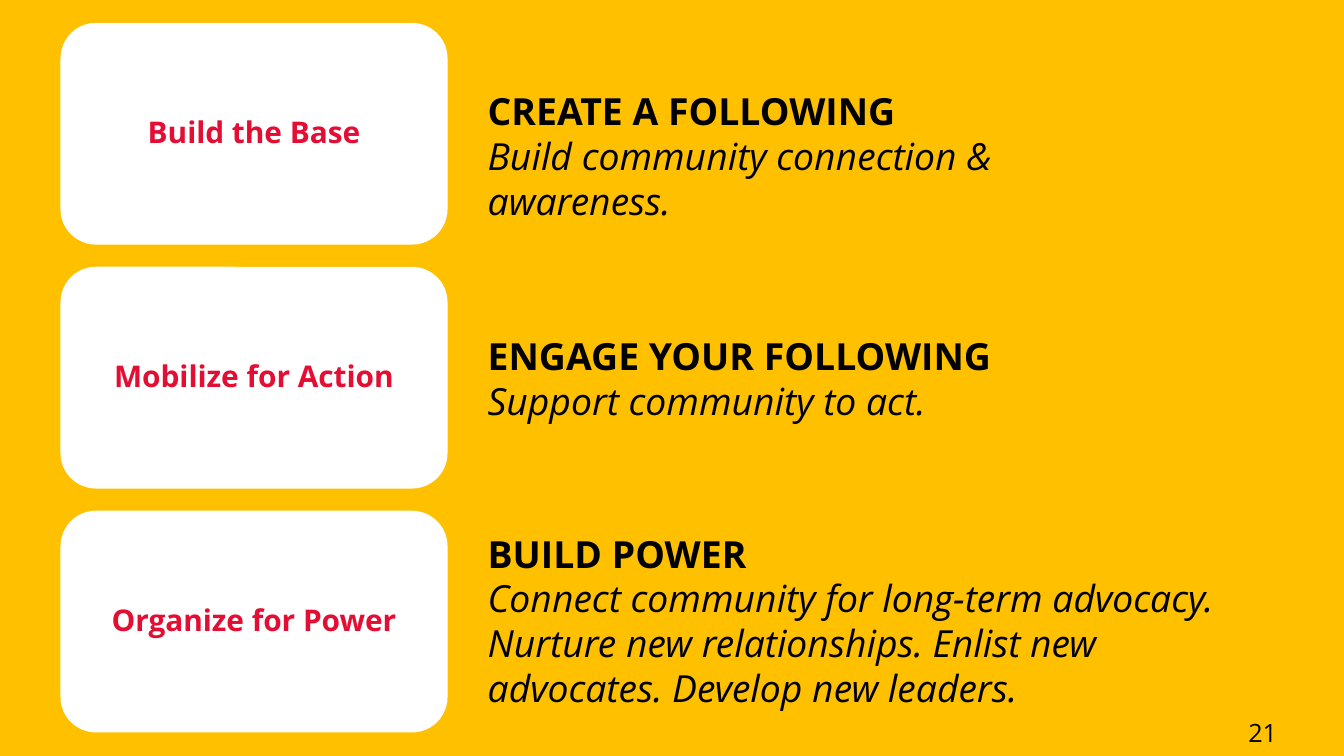
"""Build a slide of three organizing stages, each a card beside its explanation."""
from pptx import Presentation
from pptx.dml.color import RGBColor
from pptx.enum.shapes import MSO_SHAPE as Shape
from pptx.enum.text import MSO_ANCHOR as Anchor, PP_ALIGN as Align
from pptx.util import Inches, Pt

SLIDE_WIDTH = 10
SLIDE_HEIGHT = SLIDE_WIDTH * 9 / 16
CARD_LEFT, CARD_TOP, CARD_WIDTH, CARD_HEIGHT = 0.45, 0.17, 2.88, 1.65
ROW_STEP = CARD_HEIGHT * 1.1
TEXT_LEFT = CARD_LEFT + CARD_WIDTH + 0.2

STAGES = [
    ("Build the Base", (0.61, 4.38, 1.11),
     ["CREATE A FOLLOWING", "Build community connection & awareness."]),
    ("Mobilize for Action", (2.43, 4.38, 0.77),
     ["ENGAGE YOUR FOLLOWING", "Support community to act."]),
    ("Organize for Power", (3.9, 5.91, 1.45),
     ["BUILD POWER", "Connect community for long-term advocacy.",
      "Nurture new relationships. Enlist new advocates. Develop new leaders."]),
]


def paint(color_format, color):
    color_format.rgb = RGBColor.from_string(color)


def style(para, size, color="000000", bold=False, italic=False):
    for span in para.runs:
        span.font.name = "Open Sans"
        span.font.size = Pt(size)
        span.font.bold = bold
        span.font.italic = italic
        paint(span.font.color, color)


deck = Presentation()
deck.slide_width, deck.slide_height = Inches(SLIDE_WIDTH), Inches(SLIDE_HEIGHT)
page = deck.slides.add_slide(deck.slide_layouts[6])
page.background.fill.solid()
paint(page.background.fill.fore_color, "FFC000")

for row, (label, (top, width, height), lines) in enumerate(STAGES):
    card = page.shapes.add_shape(
        Shape.ROUNDED_RECTANGLE, Inches(CARD_LEFT), Inches(CARD_TOP + row * ROW_STEP),
        Inches(CARD_WIDTH), Inches(CARD_HEIGHT))
    card.adjustments[0] = 0.16
    card.shadow.inherit = False
    card.fill.solid()
    paint(card.fill.fore_color, "FFFFFF")
    card.line.fill.background()
    card.text_frame.text = label
    card.text_frame.word_wrap = True
    card.text_frame.vertical_anchor = Anchor.MIDDLE
    title = card.text_frame.paragraphs[0]
    title.alignment = Align.CENTER
    title.line_spacing = 0.9
    style(title, 16, "E40D33", bold=True)

    box = page.shapes.add_textbox(
        Inches(TEXT_LEFT), Inches(top), Inches(width), Inches(height))
    box.text_frame.word_wrap = True
    box.text_frame.text = "\n".join(lines)
    for index, para in enumerate(box.text_frame.paragraphs):
        style(para, 20, bold=index == 0, italic=index > 0)

number = page.shapes.add_textbox(Inches(9.19), Inches(5.29), Inches(0.45), Inches(0.33))
number.text_frame.word_wrap = True
number.text_frame.text = "21"
style(number.text_frame.paragraphs[0], 13.5)

deck.save("out.pptx")
